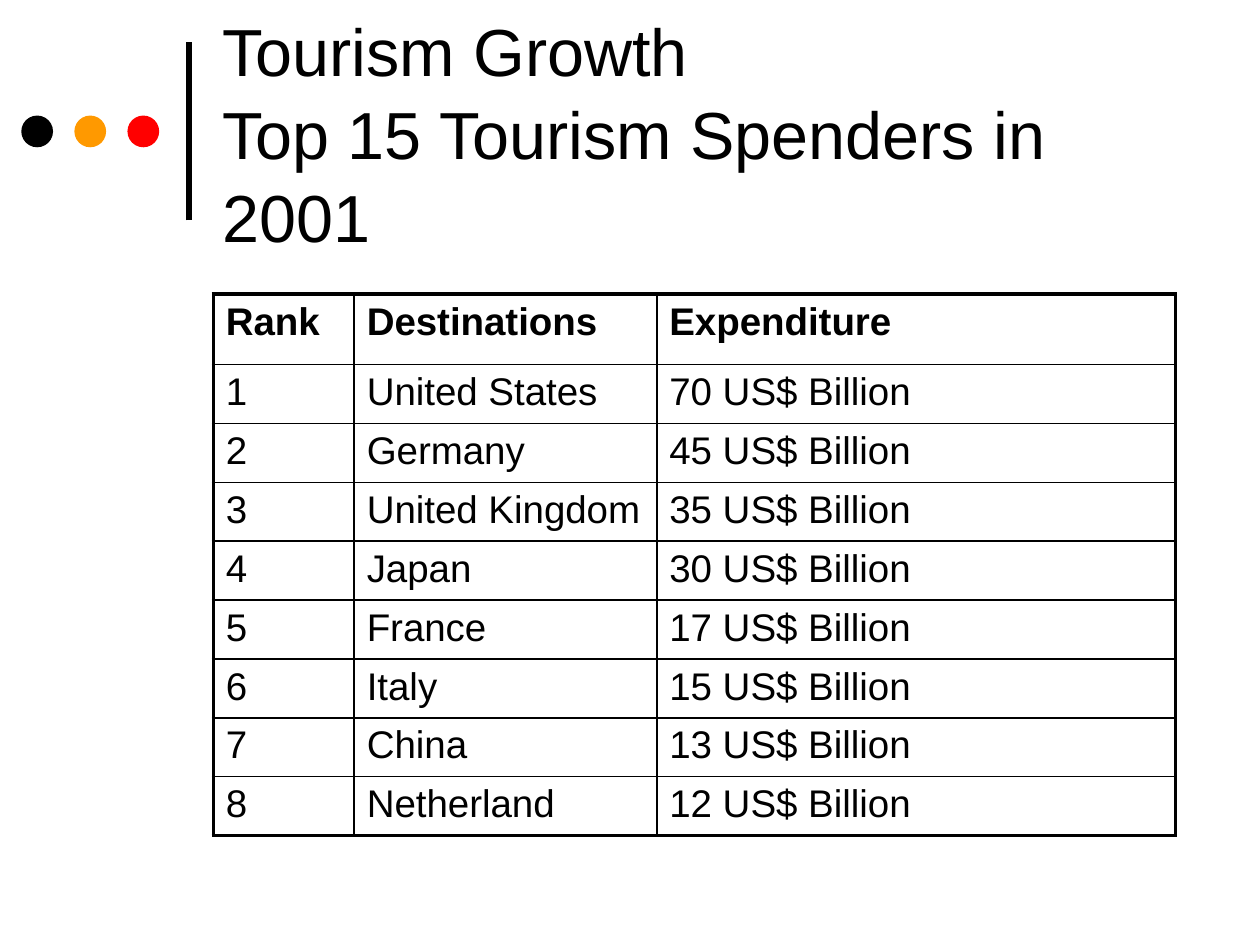
import pptx
import pptx.util
import pptx.dml.color
import pptx.enum.shapes
import pptx.enum.text
import pptx.oxml
import pptx.oxml.ns
import lxml.etree

Cm = pptx.util.Cm
Pt = pptx.util.Pt
RGBColor = pptx.dml.color.RGBColor
qn = pptx.oxml.ns.qn

BLACK = RGBColor(0x00, 0x00, 0x00)
ORANGE = RGBColor(0xFF, 0x99, 0x00)
RED = RGBColor(0xFF, 0x00, 0x00)


def add_text(p, text, size, bold=False):
    r = p.add_run()
    r.text = text
    r.font.name = "Arial"
    r.font.size = Pt(size)
    r.font.bold = bold
    r.font.color.rgb = BLACK


def add_border(cell, side, width):
    ln = lxml.etree.SubElement(cell._tc.get_or_add_tcPr(), qn("a:ln" + side), w=str(Pt(width)))
    fill = lxml.etree.SubElement(ln, qn("a:solidFill"))
    lxml.etree.SubElement(fill, qn("a:srgbClr"), val=str(BLACK))


prs = pptx.Presentation()
prs.slide_width = Cm(25.4)
prs.slide_height = Cm(19.05)
s = prs.slides.add_slide(prs.slide_layouts[6])

line = s.shapes.add_connector(
    pptx.enum.shapes.MSO_CONNECTOR.STRAIGHT, Cm(3.81), Cm(4.44), Cm(3.81), Cm(0.85))
line.line.color.rgb = BLACK
line.line.width = Pt(3)
lxml.etree.SubElement(line._element.spPr, qn("a:effectLst"))

for i, color in enumerate([BLACK, ORANGE, RED]):
    dot = s.shapes.add_shape(
        pptx.enum.shapes.MSO_SHAPE.OVAL, Cm(0.43 + 1.07 * i), Cm(2.33), Cm(0.64), Cm(0.64))
    dot.shadow.inherit = False
    dot.fill.solid()
    dot.fill.fore_color.rgb = color
    dot.line.fill.background()

sp = s.shapes.add_textbox(Cm(4.23), Cm(0.53), Cm(19.47), Cm(4.23))
tf = sp.text_frame
tf.word_wrap = True
tf.vertical_anchor = pptx.enum.text.MSO_ANCHOR.MIDDLE
p = tf.paragraphs[0]
p.line_spacing = 1.04
add_text(p, "Tourism Growth", 38)
p.add_line_break()
add_text(p, "Top 15 Tourism Spenders in 2001", 38)

spenders = [
    ("United States", 70),
    ("Germany", 45),
    ("United Kingdom", 35),
    ("Japan", 30),
    ("France", 17),
    ("Italy", 15),
    ("China", 13),
    ("Netherland", 12),
]
rows = [("Rank", "Destinations", "Expenditure")]
for rank, (country, amount) in enumerate(spenders, 1):
    rows.append((str(rank), country, f"{amount} US$ Billion"))
widths = [2.84, 6.1, 10.46]
heights = [1.42] + [1.12] * 4 + [1.19] + [1.12] * 3

frame = s.shapes.add_table(
    len(rows), len(widths), Cm(4.3), Cm(5.93), Cm(sum(widths)), Cm(sum(heights)))
table = frame.table
table.first_row = False
table.horz_banding = False
for column, width in zip(table.columns, widths):
    column.width = Cm(width)
for row, height in zip(table.rows, heights):
    row.height = Cm(height)

for i, row in enumerate(rows):
    for j, text in enumerate(row):
        cell = table.cell(i, j)
        add_text(cell.text_frame.paragraphs[0], text, 22, bold=i == 0)
        outer = {"L": j == 0, "R": j == len(row) - 1, "T": i == 0, "B": i == len(rows) - 1}
        for side, is_outer in outer.items():
            add_border(cell, side, 2.25 if is_outer else 1)
        cell.fill.background()

prs.save("out.pptx")
